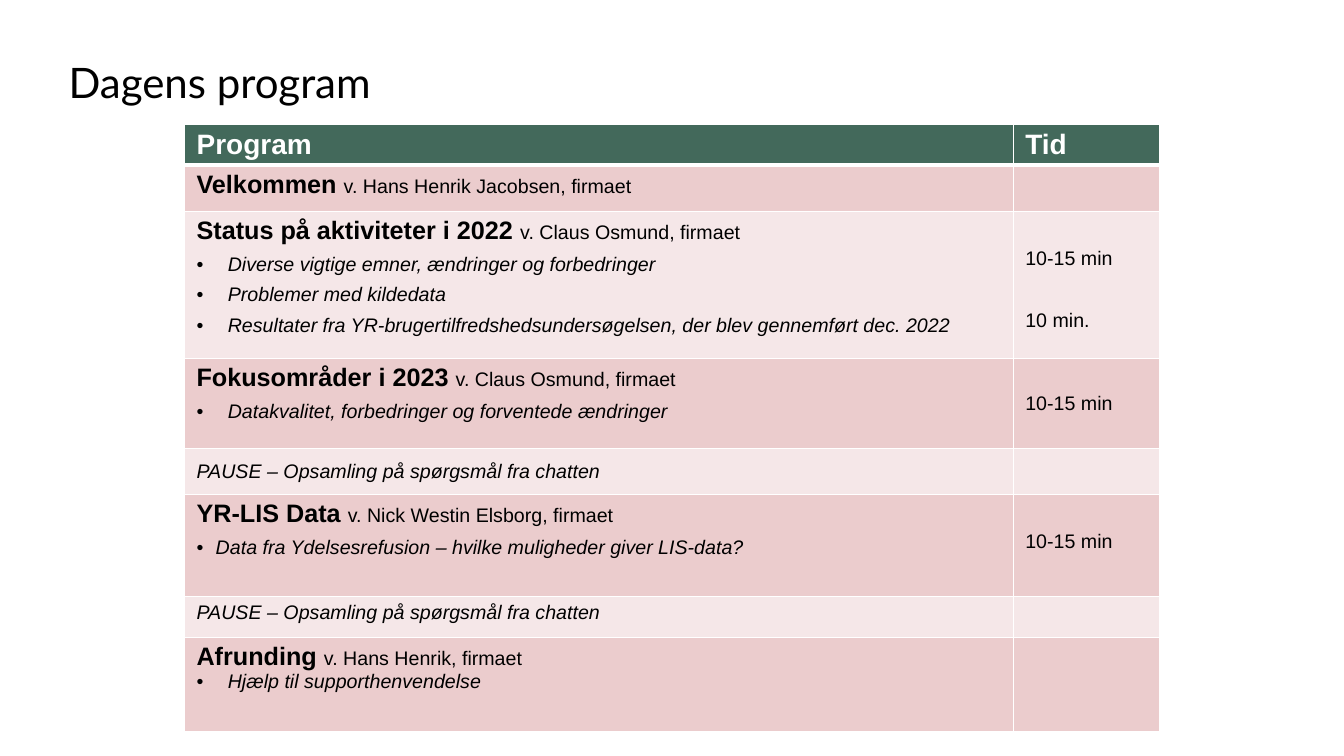
from lxml import etree
from pptx import Presentation
from pptx.dml.color import RGBColor
from pptx.enum import text
from pptx.oxml import ns
from pptx.util import Inches, Pt

GREEN = RGBColor(0x43, 0x69, 0x5B)
ROSE = RGBColor(0xEB, 0xCC, 0xCD)
PALE = RGBColor(0xF5, 0xE7, 0xE8)
WHITE = RGBColor(255, 255, 255)
BLACK = RGBColor(0, 0, 0)

TITLE = "Dagens program"
HEADS = ["Program", "Tid"]
PAUSE = "PAUSE – Opsamling på spørgsmål fra chatten"
COLS = [8.22, 1.45]
HEAD_H = 0.39
ROWS = [
    dict(h=0.46, topic="Velkommen ", host="v. Hans Henrik Jacobsen, firmaet"),
    dict(h=1.46, topic="Status på aktiviteter i 2022 ", host="v. Claus Osmund, firmaet",
         points=["Diverse vigtige emner, ændringer og forbedringer",
                 "Problemer med kildedata",
                 "Resultater fra YR-brugertilfredshedsundersøgelsen, "
                 "der blev gennemført dec. 2022"],
         times=["10-15 min", "10 min."], drop=0.36),
    dict(h=0.89, topic="Fokusområder i 2023 ", host="v. Claus Osmund, firmaet",
         points=["Datakvalitet, forbedringer og forventede ændringer"],
         times=["10-15 min"]),
    dict(h=0.46, pause=PAUSE, mid=True),
    dict(h=1.01, topic="YR-LIS Data ", host="v. Nick Westin Elsborg, firmaet",
         points=["Data fra Ydelsesrefusion – hvilke muligheder giver LIS-data?"],
         indent=0.19, times=["10-15 min"], drop=0.36),
    dict(h=0.37, pause=PAUSE),
    dict(h=0.93, topic="Afrunding ", host="v. Hans Henrik, firmaet",
         points=["Hjælp til supporthenvendelse"], gap=0),
]


def add_run(para, words, size, color=BLACK, bold=False, italic=False, face="Arial"):
    """Add one formatted run."""
    run = para.add_run()
    run.text = words
    font = run.font
    font.name, font.size, font.bold, font.italic = face, Pt(size), bold, italic
    font.color.rgb = color


def add_para(frame, after=6):
    """Return the next paragraph, using the empty first one if it is free."""
    first = frame.paragraphs[0]
    para = frame.add_paragraph() if first.runs else first
    para.space_after = Pt(after)
    return para


def add_bullet(para, indent):
    """Give a paragraph a hanging bullet."""
    props = para._p.get_or_add_pPr()
    props.set("marL", str(Inches(indent)))
    props.set("indent", str(-Inches(indent)))
    etree.SubElement(props, ns.qn("a:buFont")).set("typeface", "Arial")
    etree.SubElement(props, ns.qn("a:buChar")).set("char", "•")


def style_cell(cell, fill, top=1, bottom=1):
    """Set the fill, margins and white borders of a cell."""
    cell.fill.solid()
    cell.fill.fore_color.rgb = fill
    cell.margin_left = cell.margin_right = Inches(0.12)
    cell.margin_top = cell.margin_bottom = Inches(0.05)
    props = cell._tc.get_or_add_tcPr()
    for i, (side, width) in enumerate([("L", 1), ("R", 1), ("T", top), ("B", bottom)]):
        line = etree.Element(ns.qn("a:ln" + side), w=str(Pt(width)))
        solid = etree.SubElement(line, ns.qn("a:solidFill"))
        etree.SubElement(solid, ns.qn("a:srgbClr")).set("val", str(WHITE))
        props.insert(i, line)


def fill_topic(cell, row):
    """Write the programme cell of a row."""
    frame = cell.text_frame
    para = add_para(frame, row.get("gap", 6))
    if "pause" in row:
        add_run(para, row["pause"], 14, italic=True)
        if row.get("mid"):
            cell.vertical_anchor = text.MSO_ANCHOR.MIDDLE
        return
    add_run(para, row["topic"], 18, bold=True)
    add_run(para, row["host"], 14)
    for point in row.get("points", []):
        para = add_para(frame)
        add_bullet(para, row.get("indent", 0.31))
        add_run(para, point, 14, italic=True)


def fill_time(cell, row):
    """Write the time cell of a row."""
    if "drop" in row:
        cell.margin_top = Inches(row["drop"])
    else:
        cell.vertical_anchor = text.MSO_ANCHOR.MIDDLE
    times = row.get("times", [])
    for i, time in enumerate(times):
        after = 28 if i < len(times) - 1 else 6
        add_run(add_para(cell.text_frame, after), time, 14)


def add_title(slide):
    """Place and format the slide title."""
    title = slide.shapes.title
    title.left, title.top = Inches(0.68), Inches(0.31)
    title.width, title.height = Inches(11.92), Inches(0.92)
    frame = title.text_frame
    frame.margin_left = frame.margin_right = frame.margin_bottom = 0
    frame.margin_top = Inches(0.38)
    frame.vertical_anchor = text.MSO_ANCHOR.TOP
    frame.auto_size = text.MSO_AUTO_SIZE.NONE
    para = frame.paragraphs[0]
    para.alignment = text.PP_ALIGN.LEFT
    para.line_spacing = Pt(27)
    add_run(para, TITLE, 30, face="Lato")


def add_agenda(slide):
    """Build the programme table."""
    heights = [HEAD_H] + [row["h"] for row in ROWS]
    table = slide.shapes.add_table(
        len(heights), len(COLS), Inches(1.83), Inches(1.23),
        Inches(sum(COLS)), Inches(sum(heights))).table
    for col, width in zip(table.columns, COLS):
        col.width = Inches(width)
    for line, height in zip(table.rows, heights):
        line.height = Inches(height)
    for i, head in enumerate(HEADS):
        cell = table.cell(0, i)
        style_cell(cell, GREEN, bottom=3)
        add_run(cell.text_frame.paragraphs[0], head, 20, WHITE, bold=True)
    for i, row in enumerate(ROWS, 1):
        for cell in table.rows[i].cells:
            style_cell(cell, ROSE if i % 2 else PALE, top=3 if i == 1 else 1)
        fill_topic(table.cell(i, 0), row)
        fill_time(table.cell(i, 1), row)


def main():
    """Build and save the slide."""
    deck = Presentation()
    deck.slide_width, deck.slide_height = Inches(13.33), Inches(7.5)
    slide = deck.slides.add_slide(deck.slide_layouts[5])
    add_title(slide)
    add_agenda(slide)
    deck.save("out.pptx")


if __name__ == "__main__":
    main()
